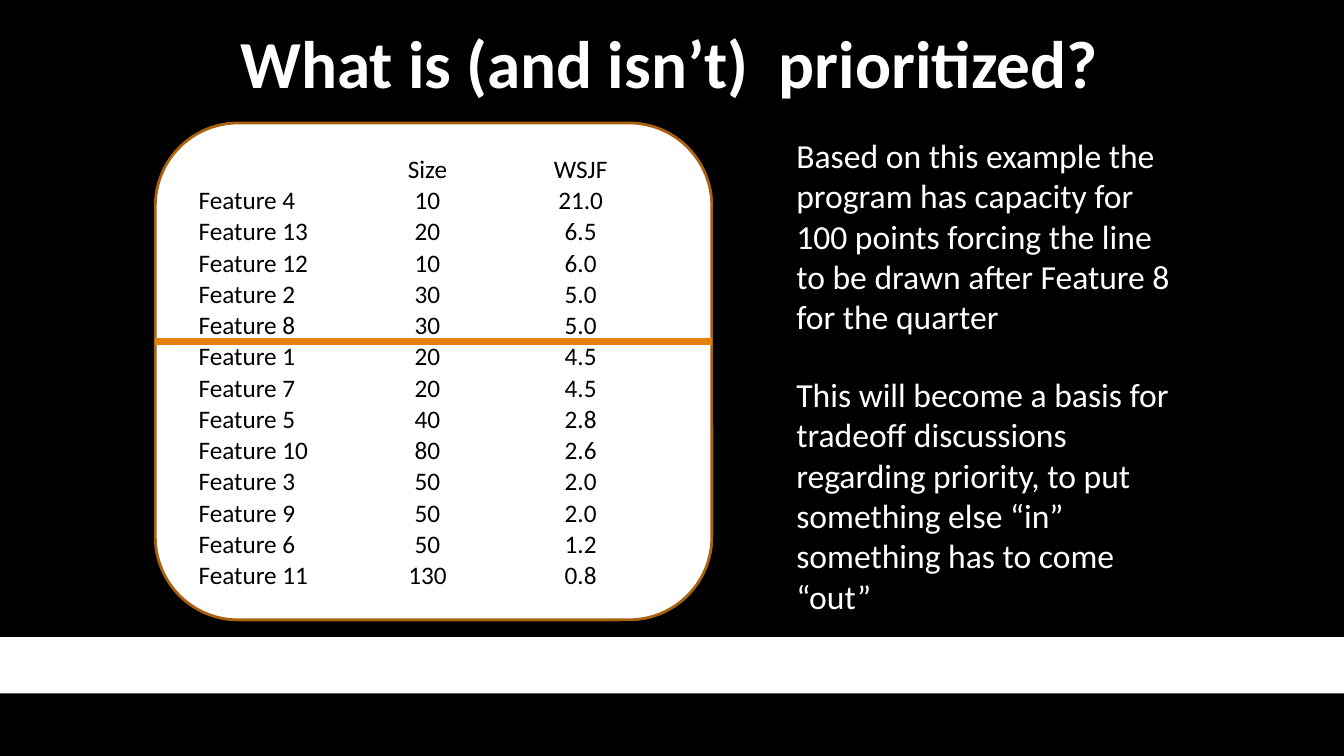
from pptx import Presentation
from pptx.dml.color import RGBColor
from pptx.enum.shapes import MSO_CONNECTOR, MSO_SHAPE
from pptx.enum.text import MSO_ANCHOR, PP_ALIGN
from pptx.oxml.ns import qn
from pptx.util import Inches, Pt
from lxml import etree

BLACK = RGBColor(0x00, 0x00, 0x00)
WHITE = RGBColor(0xFF, 0xFF, 0xFF)
BROWN = RGBColor(0xA9, 0x61, 0x0D)
ORANGE = RGBColor(0xE4, 0x81, 0x0C)

FEATURES = [
    ("", "Size", "WSJF"),
    ("Feature 4", "10", "21.0"),
    ("Feature 13", "20", "6.5"),
    ("Feature 12", "10", "6.0"),
    ("Feature 2", "30", "5.0"),
    ("Feature 8", "30", "5.0"),
    ("Feature 1", "20", "4.5"),
    ("Feature 7", "20", "4.5"),
    ("Feature 5", "40", "2.8"),
    ("Feature 10", "80", "2.6"),
    ("Feature 3", "50", "2.0"),
    ("Feature 9", "50", "2.0"),
    ("Feature 6", "50", "1.2"),
    ("Feature 11", "130", "0.8"),
]
NOTES = [
    (1.29, 2.12, "Based on this example the program has capacity for 100 points "
                 "forcing the line to be drawn after Feature 8 for the quarter"),
    (3.66, 2.52, "This will become a basis for tradeoff discussions regarding priority, "
                 "to put something else “in” something has to come “out”"),
]


class Board:
    """Holds the slide and its text style."""

    def __init__(self, slide, font):
        self.slide = slide
        self.font = font

    def add_text(self, par, text, size, color, bold=False):
        run = par.add_run()
        run.text = text
        run.font.name = self.font
        run.font.size = Pt(size)
        run.font.bold = bold
        run.font.color.rgb = color

    def panel(self, kind, x, y, w, h, fill, edge=None):
        shape = self.slide.shapes.add_shape(
            kind, Inches(x), Inches(y), Inches(w), Inches(h))
        shape.shadow.inherit = False
        shape.fill.solid()
        shape.fill.fore_color.rgb = fill
        if edge is None:
            shape.line.fill.background()
        else:
            shape.line.color.rgb = edge
            shape.line.width = Pt(2)

    def label(self, x, y, w, h, text, size, color, bold=False):
        box = self.slide.shapes.add_textbox(
            Inches(x), Inches(y), Inches(w), Inches(h))
        frame = box.text_frame
        frame.word_wrap = True
        self.add_text(frame.paragraphs[0], text, size, color, bold)
        return frame

    def title(self, x, y, w, h, text):
        frame = self.label(x, y, w, h, text, 48, WHITE, bold=True)
        frame.margin_left = frame.margin_right = 0
        frame.margin_top = frame.margin_bottom = 0
        frame.vertical_anchor = MSO_ANCHOR.MIDDLE
        par = frame.paragraphs[0]
        par.alignment = PP_ALIGN.CENTER
        par.line_spacing = 0.9

    def table(self, x, y, wide, high, rows):
        count = len(rows[0])
        table = self.slide.shapes.add_table(
            len(rows), count, Inches(x), Inches(y),
            Inches(wide * count), Inches(high * len(rows))).table
        table.first_row = False
        table.horz_banding = False
        for r, row in enumerate(rows):
            for c, text in enumerate(row):
                self.cell(table.cell(r, c), text, centred=c > 0)

    def cell(self, cell, text, centred):
        cell.fill.solid()
        cell.fill.fore_color.rgb = WHITE
        cell.margin_left = cell.margin_right = cell.margin_top = Inches(0.01)
        cell.margin_bottom = 0
        cell.vertical_anchor = MSO_ANCHOR.BOTTOM
        par = cell.text_frame.paragraphs[0]
        par.alignment = PP_ALIGN.CENTER if centred else PP_ALIGN.LEFT
        if text:
            self.add_text(par, text, 18, BLACK)

    def line(self, x, y, end, color, width):
        line = self.slide.shapes.add_connector(
            MSO_CONNECTOR.STRAIGHT, Inches(x), Inches(y), Inches(end), Inches(y))
        line.line.color.rgb = color
        line.line.width = Pt(width)
        etree.SubElement(line.element.spPr, qn("a:effectLst"))


def main():
    deck = Presentation()
    deck.slide_width = Inches(13.33)
    deck.slide_height = Inches(7.5)
    slide = deck.slides.add_slide(deck.slide_layouts[6])
    slide.background.fill.solid()
    slide.background.fill.fore_color.rgb = BLACK
    board = Board(slide, "Calibri")

    # Footer band and table panel
    board.panel(MSO_SHAPE.RECTANGLE, 0, 6.32, 13.33, 0.56, WHITE)
    board.panel(MSO_SHAPE.ROUNDED_RECTANGLE, 1.54, 1.22, 5.52, 4.93, WHITE, BROWN)

    # Title
    board.title(0.57, 0.18, 12.14, 0.96, "What is (and isn’t)  prioritized?")

    # Ranked features with the capacity line
    board.table(1.96, 1.52, 1.52, 0.29, FEATURES)
    board.line(1.54, 3.39, 7.06, ORANGE, 5)

    # Explanation
    for top, high, text in NOTES:
        board.label(7.8, top, 4, high, text, 24, WHITE)

    deck.save("out.pptx")


if __name__ == "__main__":
    main()
